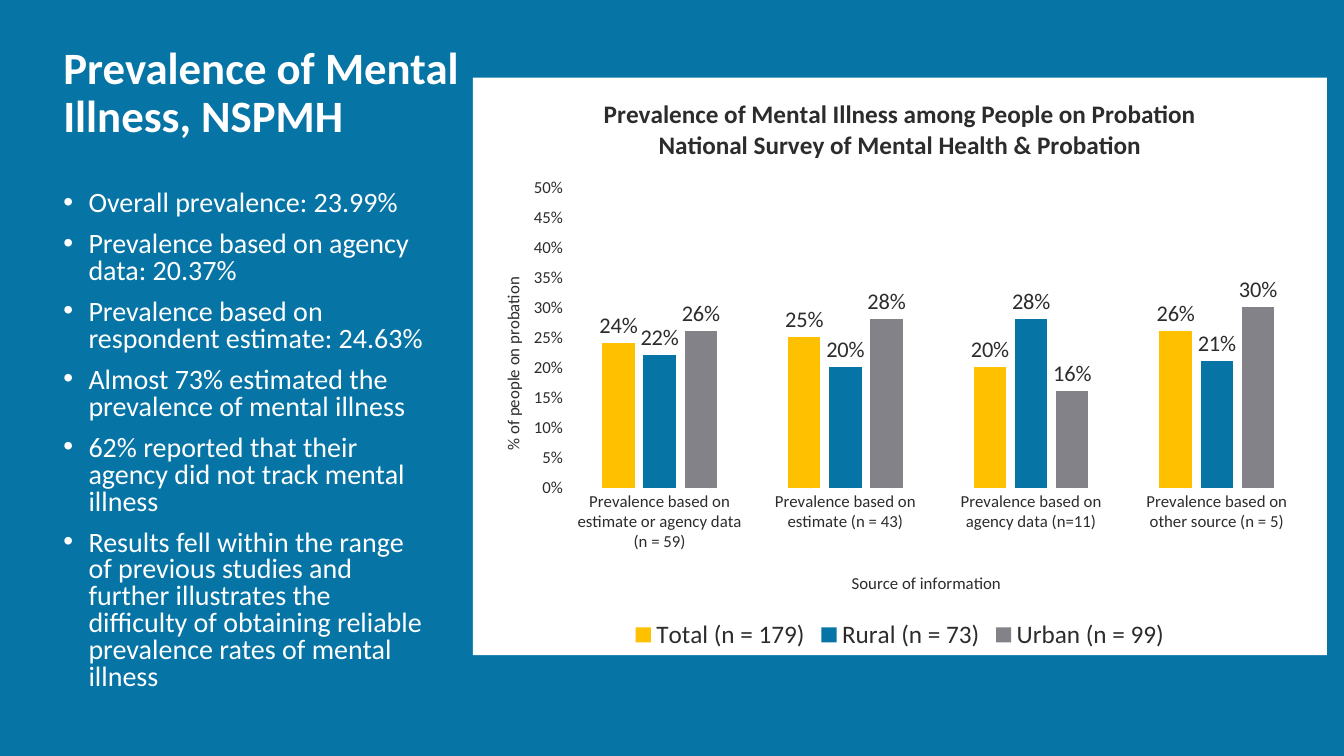
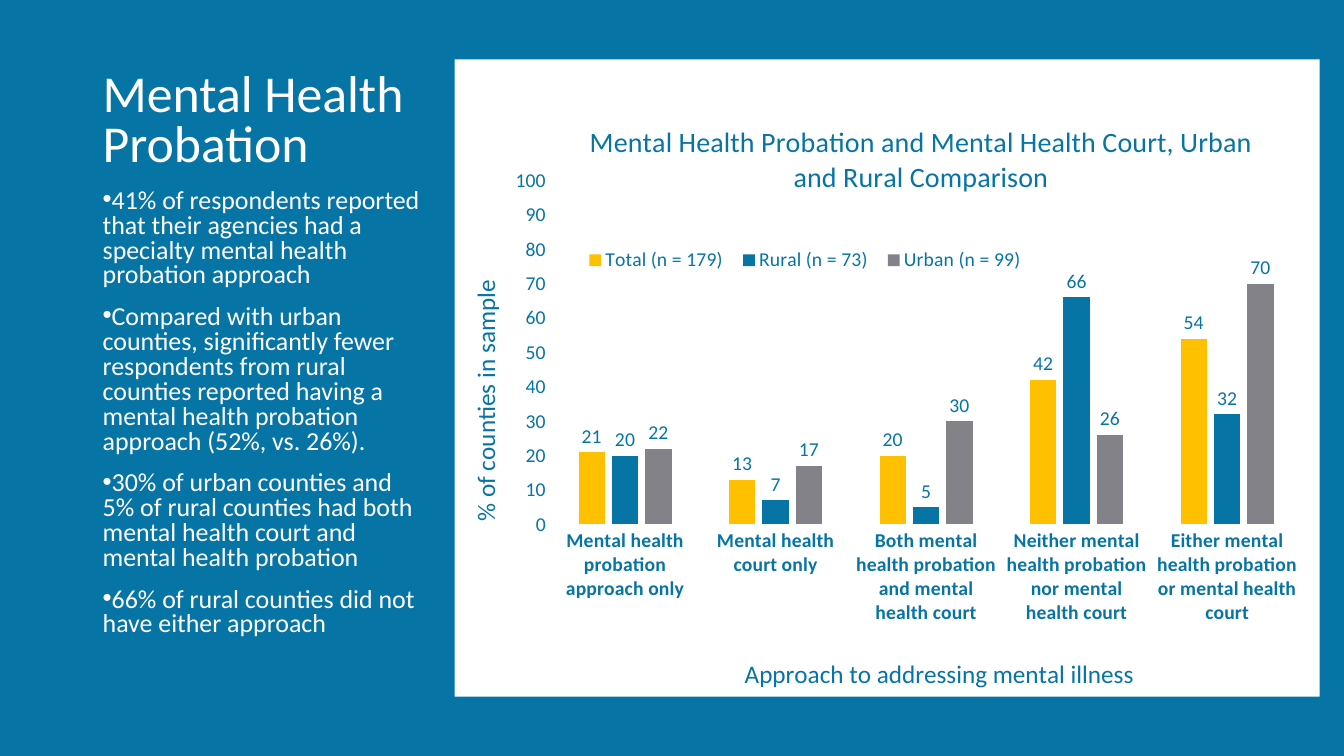
import pptx
import pptx.chart.data
import pptx.dml.color
import pptx.enum.chart
import pptx.enum.text
import pptx.oxml
import pptx.oxml.ns
import pptx.util
from lxml import etree

Inches = pptx.util.Inches
Pt = pptx.util.Pt
qn = pptx.oxml.ns.qn

FONT = "Calibri"
BLUE, WHITE, INK = "0774A6", "FFFFFF", "2C2C2C"
GROUPS = [("Total (n = 179)", "FFC000"), ("Rural (n = 73)", BLUE), ("Urban (n = 99)", "828288")]


def rgb(code):
    return pptx.dml.color.RGBColor.from_string(code)


def style(font, size, color, bold=False):
    font.name, font.size, font.bold = FONT, Pt(size), bold
    font.color.rgb = rgb(color)


def write(tf, lines, size=18, color=WHITE, bold=False, spacing=None, before=None,
          after=None, bullet_margin=None):
    for i, line in enumerate(lines):
        p = tf.paragraphs[0] if i == 0 else tf.add_paragraph()
        r = p.add_run()
        r.text = line
        style(r.font, size, color, bold)
        if spacing is not None:
            p.line_spacing = spacing
        if before is not None:
            p.space_before = Pt(before)
        if after is not None:
            p.space_after = Pt(after)
        if bullet_margin is not None:
            pPr = p._p.get_or_add_pPr()
            pPr.set("marL", str(Inches(bullet_margin)))
            pPr.set("indent", str(Inches(-0.25)))
            etree.SubElement(pPr, qn("a:buFont")).set("typeface", "Arial")
            etree.SubElement(pPr, qn("a:buChar")).set("char", "•")


def add_text(s, box, lines, anchor=pptx.enum.text.MSO_ANCHOR.TOP, **fmt):
    tf = s.shapes.add_textbox(*map(Inches, box)).text_frame
    tf.word_wrap = True
    tf.vertical_anchor = anchor
    write(tf, lines, **fmt)


def place(element, x, y, w=None, h=None, inner=False):
    """Set a manual layout, as fractions of the chart, on a chart part."""
    for old in element.findall(qn("c:layout")):
        element.remove(old)
    layout = etree.Element(qn("c:layout"))
    manual = etree.SubElement(layout, qn("c:manualLayout"))
    settings = [("layoutTarget", "inner")] if inner else []
    settings += [("xMode", "edge"), ("yMode", "edge"), ("x", x), ("y", y)]
    if w is not None:
        settings += [("w", w), ("h", h)]
    for name, value in settings:
        etree.SubElement(manual, qn("c:" + name)).set("val", str(value))
    overlay = element.find(qn("c:overlay"))
    if overlay is None:
        element.insert(0, layout)
    else:
        overlay.addprevious(layout)


def style_axis(axis, title, position, title_size, size, color, bold=False):
    axis.major_tick_mark = axis.minor_tick_mark = pptx.enum.chart.XL_TICK_MARK.NONE
    style(axis.tick_labels.font, size, color, bold)
    write(axis.axis_title.text_frame, [title], size=title_size, color=color)
    place(axis.axis_title._element, *position)


def white_background(chart):
    spPr = pptx.oxml.parse_xml(
        '<c:spPr %s><a:solidFill><a:srgbClr val="%s"/></a:solidFill>'
        '<a:ln><a:noFill/></a:ln></c:spPr>' % (pptx.oxml.ns.nsdecls("c", "a"), WHITE))
    chart._chartSpace.find(qn("c:chart")).addnext(spPr)


def add_columns(s, box, title, categories, values, color, size, title_size, axis_title_size,
                label_size, legend_size, x_title, x_position, y_title, y_position, plot_box,
                top, step, axis_format, label_format, title_bold=False, category_bold=False,
                title_position=None, legend_box=None):
    data = pptx.chart.data.CategoryChartData()
    data.categories = categories
    for (name, _), numbers in zip(GROUPS, values):
        data.add_series(name, numbers)
    kind = pptx.enum.chart.XL_CHART_TYPE.COLUMN_CLUSTERED
    chart = s.shapes.add_chart(kind, *map(Inches, box), data).chart
    style(chart.font, size, color)
    white_background(chart)

    chart.has_title = True
    write(chart.chart_title.text_frame, title, size=title_size, color=color, bold=title_bold)
    if title_position:
        place(chart.chart_title._element, *title_position)

    style_axis(chart.category_axis, x_title, x_position, axis_title_size, size, color,
               category_bold)
    chart.category_axis.format.line.color.rgb = rgb(WHITE)
    chart.category_axis.format.line.width = Pt(0.75)

    value_axis = chart.value_axis
    style_axis(value_axis, y_title, y_position, axis_title_size, size, color)
    value_axis.axis_title.text_frame._txBody.bodyPr.set("rot", "-5400000")
    value_axis.minimum_scale, value_axis.maximum_scale = 0, top
    value_axis.major_unit = step
    value_axis.tick_labels.number_format = axis_format
    value_axis.tick_labels.number_format_is_linked = False
    value_axis.format.line.fill.background()
    grid = value_axis.major_gridlines.format.line
    grid.color.rgb, grid.width = rgb(WHITE), Pt(0.75)

    chart.has_legend = True
    chart.legend.position = pptx.enum.chart.XL_LEGEND_POSITION.BOTTOM
    chart.legend.include_in_layout = False
    style(chart.legend.font, legend_size, color)
    if legend_box:
        place(chart.legend._element, *legend_box)

    plot = chart.plots[0]
    plot.gap_width, plot.overlap, plot.vary_by_categories = 219, -27, False
    for series, (_, fill) in zip(plot.series, GROUPS):
        series.format.fill.solid()
        series.format.fill.fore_color.rgb = rgb(fill)
        labels = series.data_labels
        labels.show_value = True
        labels.number_format, labels.number_format_is_linked = label_format, False
        labels.position = pptx.enum.chart.XL_LABEL_POSITION.OUTSIDE_END
        style(labels.font, label_size, color)
    place(chart._chartSpace.find(".//" + qn("c:plotArea")), *plot_box, inner=True)


def add_slide(prs):
    s = prs.slides.add_slide(prs.slide_layouts[6])
    s.background.fill.solid()
    s.background.fill.fore_color.rgb = rgb(BLUE)
    return s


def prevalence_slide(prs):
    s = add_slide(prs)
    add_text(s, (0.53, 1.85, 3.83, 5.37), [
        "Overall prevalence: 23.99%",
        "Prevalence based on agency data: 20.37%",
        "Prevalence based on respondent estimate: 24.63%",
        "Almost 73% estimated the prevalence of mental illness",
        "62% reported that their agency did not track mental illness",
        "Results fell within the range of previous studies and further illustrates the "
        "difficulty of obtaining reliable prevalence rates of mental illness",
    ], size=20, spacing=0.8, before=10, bullet_margin=0.25)
    add_columns(
        s, (4.69, 0.77, 8.47, 5.73),
        ["Prevalence of Mental Illness among People on Probation",
         "National Survey of Mental Health & Probation"],
        ["Prevalence based on estimate or agency data (n = 59)",
         "Prevalence based on estimate (n = 43)",
         "Prevalence based on agency data (n=11)",
         "Prevalence based on other source (n = 5)"],
        [(0.24, 0.25, 0.2, 0.26), (0.22, 0.2, 0.28, 0.21), (0.26, 0.28, 0.16, 0.3)],
        color=INK, size=12, title_size=18, title_bold=True, axis_title_size=12,
        label_size=16, legend_size=18,
        x_title="Source of information", x_position=(0.44, 0.85),
        y_title="% of people on probation", y_position=(0.03, 0.34),
        plot_box=(0.11, 0.19, 0.87, 0.52), top=0.5, step=0.05,
        axis_format="0%", label_format="0%")
    add_text(s, (0.53, 0.4, 4.16, 1.45), ["Prevalence of Mental Illness, NSPMH"],
             size=32, bold=True, spacing=0.9)


def probation_slide(prs):
    s = add_slide(prs)
    add_text(s, (0.92, 1.83, 3.42, 4.88), [
        "41% of respondents reported that their agencies had a specialty mental health "
        "probation approach",
        "Compared with urban counties, significantly fewer respondents from rural counties "
        "reported having a mental health probation approach (52%, vs. 26%).",
        "30% of urban counties and 5% of rural counties had both mental health court and "
        "mental health probation",
        "66% of rural counties did not have either approach",
    ], size=18.5, spacing=0.8, after=12, bullet_margin=0)
    add_columns(
        s, (4.51, 0.59, 8.58, 6.33),
        ["Mental Health Probation and Mental Health Court, Urban and Rural Comparison"],
        ["Mental health probation approach only",
         "Mental health court only",
         "Both mental health probation and mental health court",
         "Neither mental health probation nor mental health court",
         "Either mental health probation or mental health court"],
        [(21, 13, 20, 42, 54), (20, 7, 5, 66, 32), (22, 17, 30, 26, 70)],
        color=BLUE, size=14, title_size=20, axis_title_size=18, label_size=14,
        legend_size=14, category_bold=True, title_position=(0.15, 0.09),
        x_title="Approach to addressing mental illness", x_position=(0.33, 0.93),
        y_title="% of counties in sample", y_position=(0.01, 0.34),
        plot_box=(0.11, 0.19, 0.87, 0.54), legend_box=(0.14, 0.29, 0.53, 0.05),
        top=100, step=10, axis_format="General", label_format="#,##0")
    add_text(s, (0.92, 0.59, 4.1, 1.17), ["Mental Health Probation"],
             anchor=pptx.enum.text.MSO_ANCHOR.BOTTOM, size=37, spacing=0.8, after=6)


def main():
    prs = pptx.Presentation()
    prs.slide_width, prs.slide_height = Inches(13.33), Inches(7.5)
    prevalence_slide(prs)
    probation_slide(prs)
    prs.save("out.pptx")


if __name__ == "__main__":
    main()
